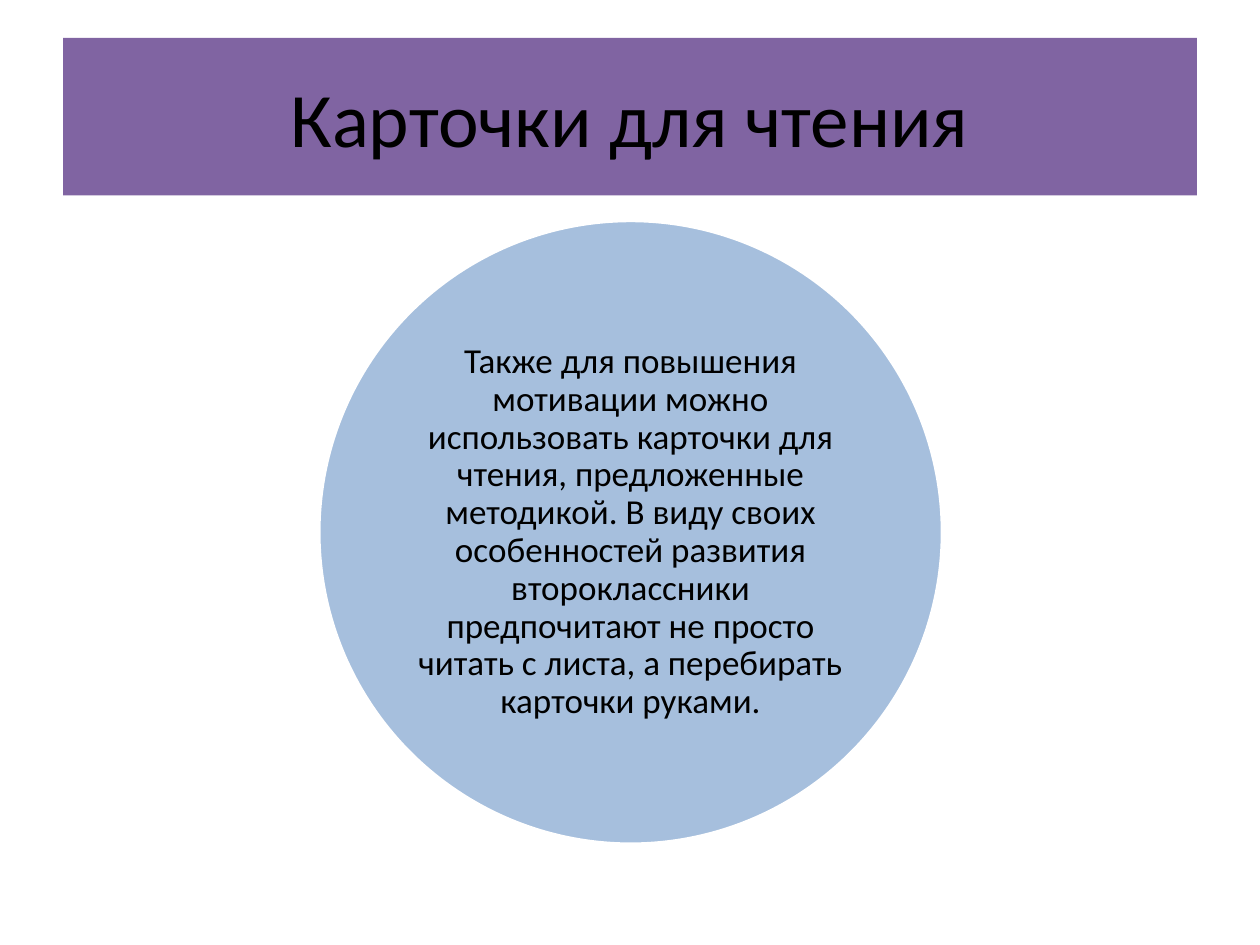
import pptx
import pptx.util
import pptx.dml.color
import pptx.enum.shapes
import pptx.enum.text
import pptx.oxml.ns
import lxml.etree
from pptx.util import Inches

RGBColor = pptx.dml.color.RGBColor
PURPLE = RGBColor(0x80, 0x64, 0xA2)
BLUE = RGBColor(0x4F, 0x81, 0xBD)
WHITE = RGBColor(0xFF, 0xFF, 0xFF)
BLACK = RGBColor(0x00, 0x00, 0x00)
FONT = "Calibri"
TITLE = "Карточки для чтения"
CARD_TEXT = (
    "Также для повышения мотивации можно использовать карточки для чтения, "
    "предложенные методикой. В виду своих особенностей развития "
    "второклассники предпочитают не просто читать с листа, а перебирать "
    "карточки руками."
)


def write_text(shape, text, size):
    frame = shape.text_frame
    frame.word_wrap = True
    frame.auto_size = pptx.enum.text.MSO_AUTO_SIZE.NONE
    frame.vertical_anchor = pptx.enum.text.MSO_ANCHOR.MIDDLE
    frame.text = text
    paragraph = frame.paragraphs[0]
    paragraph.alignment = pptx.enum.text.PP_ALIGN.CENTER
    paragraph.font.name = FONT
    paragraph.font.size = pptx.util.Pt(size)
    paragraph.font.color.rgb = BLACK
    return frame


def set_opacity(shape, percent):
    color = shape.fill._xPr.find(".//" + pptx.oxml.ns.qn("a:srgbClr"))
    alpha = lxml.etree.SubElement(color, pptx.oxml.ns.qn("a:alpha"))
    alpha.set("val", str(percent * 1000))


def add_title(slide):
    title = slide.shapes.title
    title.left, title.top = Inches(0.5), Inches(0.3)
    title.width, title.height = Inches(9), Inches(1.25)
    title.fill.solid()
    title.fill.fore_color.rgb = PURPLE
    write_text(title, TITLE, 44)


def add_text_circle(slide, left, top, diameter):
    circle = slide.shapes.add_shape(
        pptx.enum.shapes.MSO_SHAPE.OVAL,
        Inches(left), Inches(top), Inches(diameter), Inches(diameter),
    )
    circle.shadow.inherit = False
    circle.fill.solid()
    circle.fill.fore_color.rgb = BLUE
    set_opacity(circle, 50)
    circle.line.color.rgb = WHITE
    circle.line.width = pptx.util.Pt(2)
    frame = write_text(circle, CARD_TEXT, 20)
    frame.margin_left = frame.margin_right = 0
    frame.margin_top = frame.margin_bottom = 0
    frame.paragraphs[0].line_spacing = 0.9


def main():
    presentation = pptx.Presentation()
    presentation.slide_width = Inches(10)
    presentation.slide_height = Inches(7.5)
    slide = presentation.slides.add_slide(presentation.slide_layouts[5])
    add_title(slide)
    add_text_circle(slide, 2.53, 1.75, 4.95)
    presentation.save("out.pptx")


if __name__ == "__main__":
    main()
